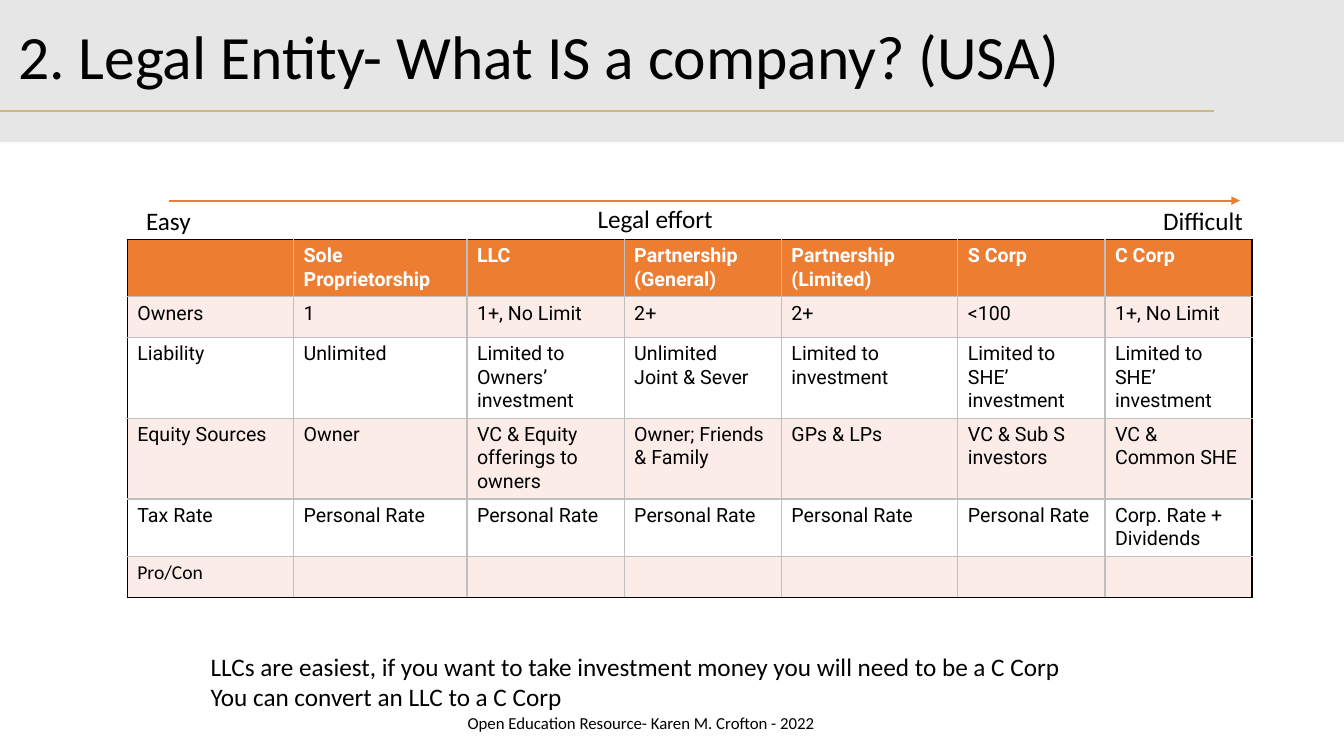
from lxml.etree import SubElement
from pptx import Presentation
from pptx.dml.color import RGBColor
from pptx.enum.shapes import MSO_CONNECTOR, MSO_SHAPE
from pptx.enum.text import MSO_ANCHOR
from pptx.oxml.ns import qn
from pptx.util import Pt

TITLE = "2. Legal Entity- What IS a company? (USA)"
FOOTER = "Open Education Resource- Karen M. Crofton - 2022"
ADVICE = """LLCs are easiest, if you want to take investment money you will need to be a C Corp
You can convert an LLC to a C Corp"""
ENTITIES = [
    ["", "Sole\nProprietorship", "LLC", "Partnership (General)",
     "Partnership\n(Limited)", "S Corp", "C Corp"],
    ["Owners", "1", "1+, No Limit", "2+", "2+", "<100", "1+, No Limit"],
    ["Liability", "Unlimited", "Limited to Owners’ investment", "Unlimited\nJoint & Sever",
     "Limited to investment", "Limited to SHE’ investment", "Limited to SHE’ investment"],
    ["Equity Sources", "Owner", "VC & Equity offerings to owners", "Owner; Friends & Family",
     "GPs & LPs", "VC & Sub S investors", "VC & Common SHE"],
    ["Tax Rate"] + ["Personal Rate"] * 5 + ["Corp. Rate + Dividends"],
    ["Pro/Con"] + [""] * 6,
]
COLUMN_WIDTHS = [118.8, 123.84, 112.32, 112.32, 126, 105.12, 105.12]
ROW_HEIGHT = 29.2
TABLE_LEFT, TABLE_TOP = 90.9, 171.1
EFFORT_TOP = 143.3
EFFORT_LABELS = [
    ("Easy", (97.2, EFFORT_TOP, 109.4, 29)),
    ("Difficult", (823.7, EFFORT_TOP, 109.4, 29)),
    ("Legal effort", (419.8, 141.8, 157.7, 29)),
]
THEME = {
    "body": "Calibri", "table": "Roboto",
    "title_size": 44, "text_size": 18, "cell_size": 14, "footer_size": 12,
    "ink": "000000", "paper": "FFFFFF", "band": "E7E6E6", "gold": "CEB87B",
    "accent": "ED7D31", "tint": "FCECE8", "grid": "BFBFBF",
}


def color(name):
    return RGBColor.from_string(THEME[name])


def write(frame, text, size, font="body", ink="ink", bold=False, spacing=None):
    frame.word_wrap = True
    for index, line in enumerate(text.split("\n")):
        para = frame.paragraphs[0] if index == 0 else frame.add_paragraph()
        para.line_spacing = spacing
        span = para.add_run()
        span.text = line
        span.font.name = THEME[font]
        span.font.size = Pt(THEME[size])
        span.font.bold = bold
        span.font.color.rgb = color(ink)


def add_text(page, text, bounds, size="text_size", spacing=None, anchor=MSO_ANCHOR.TOP):
    box = page.shapes.add_textbox(*map(Pt, bounds))
    box.text_frame.vertical_anchor = anchor
    write(box.text_frame, text, size, spacing=spacing)


def add_line(page, left, right, top, tone, width, arrow=False):
    line = page.shapes.add_connector(
        MSO_CONNECTOR.STRAIGHT, Pt(left), Pt(top), Pt(right), Pt(top))
    line.line.color.rgb = color(tone)
    line.line.width = Pt(width)
    if arrow:
        SubElement(line.line._get_or_add_ln(), qn("a:tailEnd"), type="triangle")
    SubElement(line._element.spPr, qn("a:effectLst"))


def add_borders(cell, outer_sides):
    properties = cell._tc.get_or_add_tcPr()
    for position, side in enumerate("LRTB"):
        border = properties.makeelement(qn(f"a:ln{side}"), {"w": str(Pt(1))})
        tone = "ink" if side in outer_sides else "grid"
        SubElement(SubElement(border, qn("a:solidFill")), qn("a:srgbClr"), val=THEME[tone])
        properties.insert(position, border)


def add_entities(page):
    row_count, column_count = len(ENTITIES), len(COLUMN_WIDTHS)
    table = page.shapes.add_table(
        row_count, column_count, Pt(TABLE_LEFT), Pt(TABLE_TOP),
        Pt(sum(COLUMN_WIDTHS)), Pt(ROW_HEIGHT * row_count)).table
    for column, width in zip(table.columns, COLUMN_WIDTHS):
        column.width = Pt(width)
    for row_index, texts in enumerate(ENTITIES):
        table.rows[row_index].height = Pt(ROW_HEIGHT)
        header, last = row_index == 0, row_index == row_count - 1
        fill = "accent" if header else "tint" if row_index % 2 else "paper"
        for column_index, text in enumerate(texts):
            cell = table.cell(row_index, column_index)
            cell.fill.solid()
            cell.fill.fore_color.rgb = color(fill)
            edges = {"L": column_index == 0, "R": column_index == column_count - 1,
                     "T": header, "B": last}
            add_borders(cell, [side for side, outer in edges.items() if outer])
            if text:
                write(cell.text_frame, text, "cell_size", "body" if last else "table",
                      "paper" if header else "ink", header)


def main():
    deck = Presentation()
    deck.slide_width, deck.slide_height = Pt(960), Pt(540)
    page = deck.slides.add_slide(deck.slide_layouts[6])
    band = page.shapes.add_shape(MSO_SHAPE.RECTANGLE, 0, 0, Pt(960), Pt(101.5))
    band.shadow.inherit = False
    band.fill.solid()
    band.fill.fore_color.rgb = color("band")
    band.line.fill.background()
    add_line(page, 0, 867.4, 79.3, "gold", 2)
    add_text(page, FOOTER, (326.9, 505.4, 481, 21.8), "footer_size")
    add_text(page, TITLE, (5.8, 14.4, 828, 56.9), "title_size", 0.9, MSO_ANCHOR.MIDDLE)
    add_entities(page)
    add_line(page, 120.5, 885.6, EFFORT_TOP, "accent", 1.5, arrow=True)
    for label, bounds in EFFORT_LABELS:
        add_text(page, label, bounds)
    add_text(page, ADVICE, (143.3, 461.5, 697.7, 51))
    deck.save("out.pptx")


if __name__ == "__main__":
    main()
